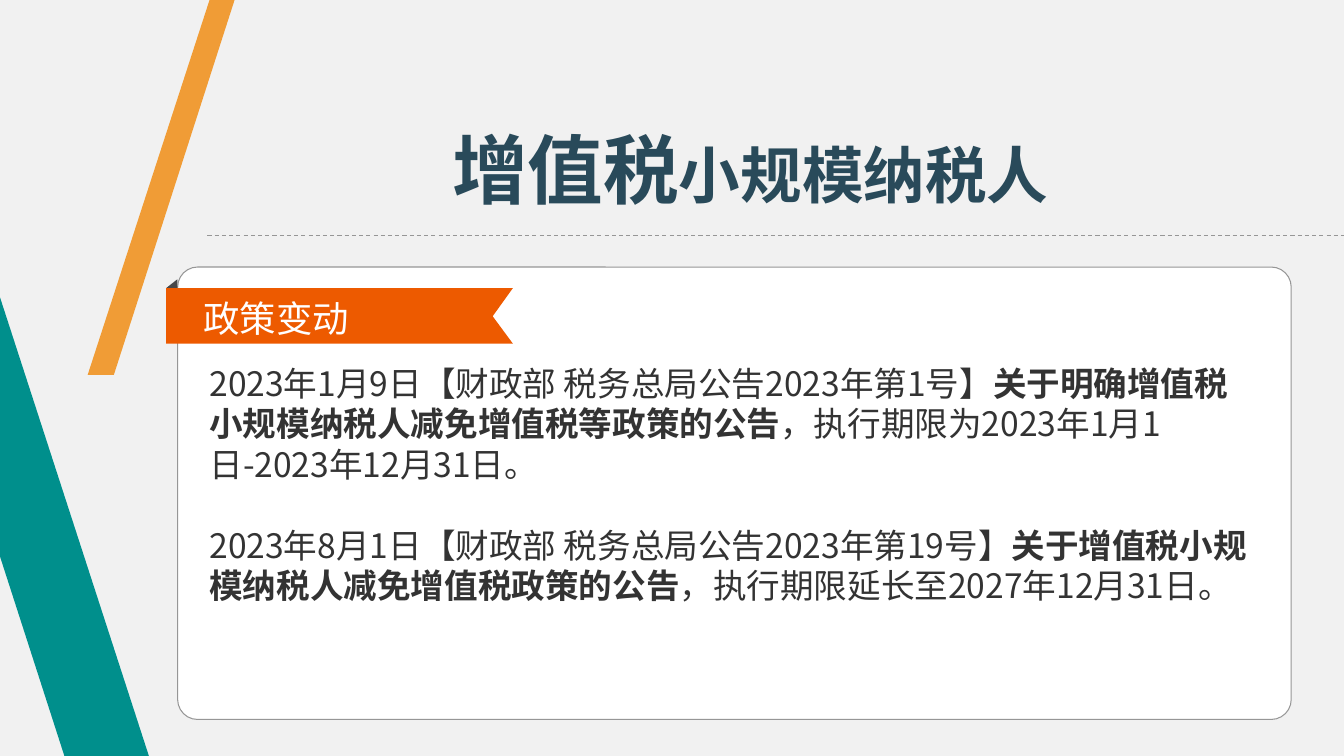
from dataclasses import dataclass

from lxml.etree import SubElement
from pptx import Presentation
from pptx.dml.color import RGBColor
from pptx.enum.dml import MSO_LINE
from pptx.enum.shapes import MSO_CONNECTOR, MSO_SHAPE
from pptx.oxml.ns import qn
from pptx.slide import Slide
from pptx.util import Cm, Pt

FONT = "Noto Sans CJK SC"
WIDTH, HEIGHT = 33.88, 19.05
GREY = "969696"


@dataclass
class Outline:
    color: str
    points: list[tuple[float, float]]


@dataclass
class Span:
    text: str
    size: float
    bold: bool = False


@dataclass
class TextBlock:
    left: float
    top: float
    width: float
    height: float
    color: str
    paragraphs: list[list[Span]]
    gap: float = 0


TEAL_BAND = Outline("008F8C", [(3.78, 19.13), (1.65, 19.13), (0, 14.02), (0, 7.49)])
RIBBON_FOLD = Outline("484849", [(4.47, 7.04), (4.19, 7.26), (4.19, 8.64), (4.47, 8.43)])
RIBBON = Outline("ED5A00", [(12.93, 7.26), (4.19, 7.26), (4.19, 8.66),
                            (12.93, 8.66), (12.42, 7.97)])
ORANGE_BAND = Outline("F09C36", [(5.31, -0.08), (5.94, -0.08), (2.87, 9.45), (2.21, 9.45)])

TEXT_BLOCKS = [
    TextBlock(4.88, 7.34, 7.06, 1.37, "FFFFFF", [[Span("政策变动", 26)]]),
    TextBlock(5.03, 9.02, 26.77, 7.44, "333333", [
        [Span("2023年1月9日【财政部 税务总局公告2023年第1号】", 24),
         Span("关于明确增值税小规模纳税人减免增值税等政策的公告", 24, True),
         Span("，执行期限为2023年1月1日-2023年12月31日。", 24)],
        [Span("2023年8月1日【财政部 税务总局公告2023年第19号】", 24),
         Span("关于增值税小规模纳税人减免增值税政策的公告", 24, True),
         Span("，执行期限延长至2027年12月31日。", 24)],
    ], gap=29),
    TextBlock(11.15, 2.97, 16.23, 2.57, "294A5A",
              [[Span("增值税", 54, True), Span("小规模纳税人", 44, True)]]),
]


def rgb(value: str) -> RGBColor:
    return RGBColor.from_string(value)


def draw_outline(page: Slide, outline: Outline) -> None:
    start, *others = [(Cm(x), Cm(y)) for x, y in outline.points]
    builder = page.shapes.build_freeform(*start)
    builder.add_line_segments(others, close=True)
    shape = builder.convert_to_shape()
    shape.shadow.inherit = False
    shape.fill.solid()
    shape.fill.fore_color.rgb = rgb(outline.color)
    shape.line.fill.background()


def draw_divider(page: Slide) -> None:
    line = page.shapes.add_connector(
        MSO_CONNECTOR.STRAIGHT, Cm(5.23), Cm(5.93), Cm(WIDTH), Cm(5.93))
    line.line.color.rgb = rgb(GREY)
    line.line.width = Pt(0.75)
    line.line.dash_style = MSO_LINE.DASH
    SubElement(line._element.spPr, qn("a:effectLst"))


def draw_card(page: Slide) -> None:
    card = page.shapes.add_shape(
        MSO_SHAPE.ROUNDED_RECTANGLE, Cm(4.48), Cm(6.73), Cm(28.07), Cm(11.4))
    card.adjustments[0] = 0.044
    card.shadow.inherit = False
    card.fill.solid()
    card.fill.fore_color.rgb = rgb("FFFFFF")
    card.line.color.rgb = rgb(GREY)
    card.line.width = Pt(0.75)


def draw_text(page: Slide, block: TextBlock) -> None:
    box = page.shapes.add_textbox(
        Cm(block.left), Cm(block.top), Cm(block.width), Cm(block.height))
    frame = box.text_frame
    frame.word_wrap = True
    for index, spans in enumerate(block.paragraphs):
        para = frame.add_paragraph() if index else frame.paragraphs[0]
        para.space_before = Pt(block.gap if index else 0)
        for span in spans:
            run = para.add_run()
            run.text = span.text
            run.font.size = Pt(span.size)
            run.font.bold = span.bold
            run.font.color.rgb = rgb(block.color)
            run.font.name = FONT
            # Chinese glyphs take their typeface from a:ea
            SubElement(run.font._element, qn("a:ea"), typeface=FONT)


def main() -> None:
    deck = Presentation()
    deck.slide_width, deck.slide_height = Cm(WIDTH), Cm(HEIGHT)
    page = deck.slides.add_slide(deck.slide_layouts[6])
    page.background.fill.solid()
    page.background.fill.fore_color.rgb = rgb("F1F1F1")

    draw_outline(page, TEAL_BAND)
    draw_divider(page)
    draw_card(page)
    for outline in (RIBBON_FOLD, RIBBON, ORANGE_BAND):
        draw_outline(page, outline)
    for block in TEXT_BLOCKS:
        draw_text(page, block)
    deck.save("out.pptx")


if __name__ == "__main__":
    main()
